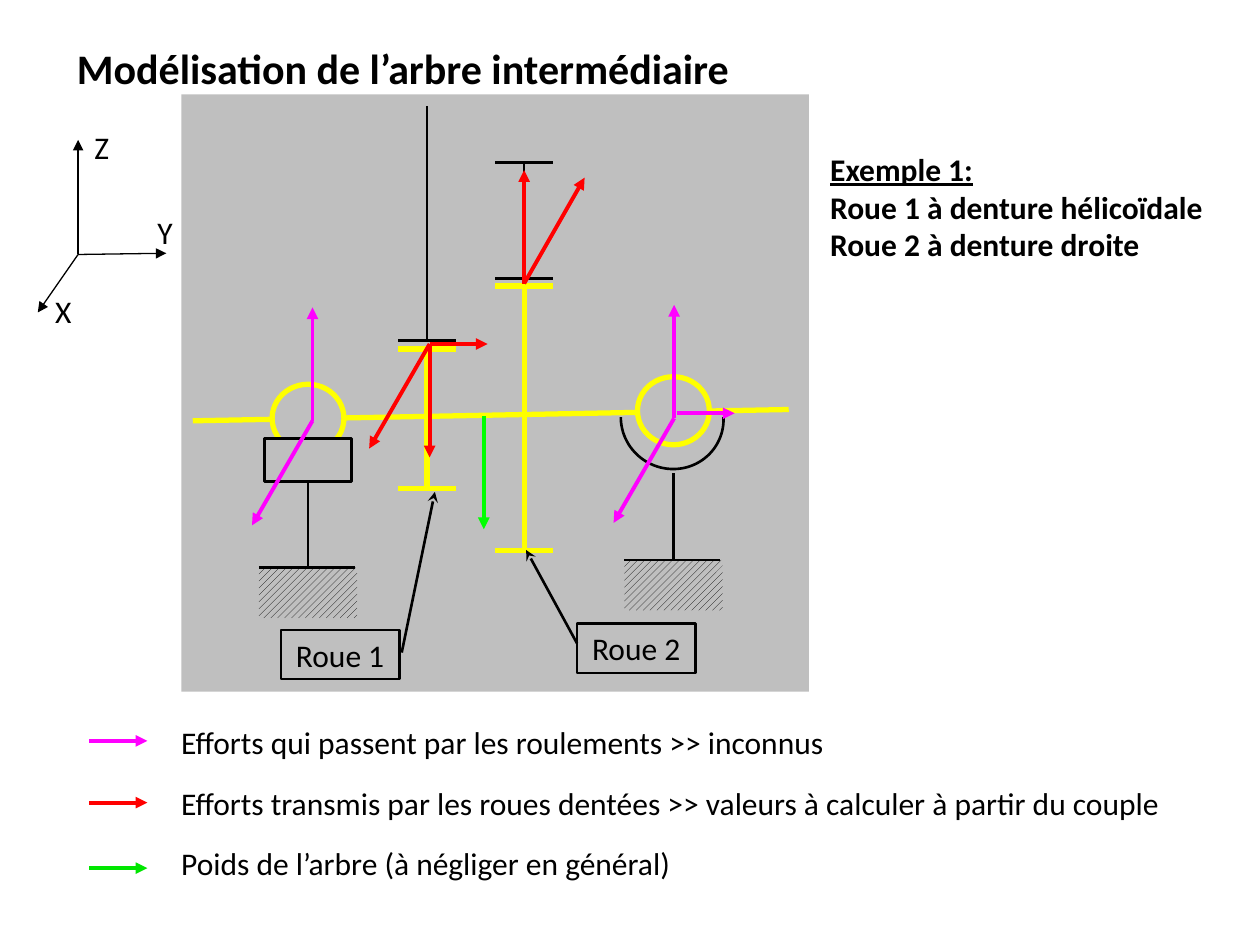
from dataclasses import dataclass

import pptx
import pptx.dml.color
import pptx.enum.dml
import pptx.enum.shapes
import pptx.enum.text
import pptx.oxml
import pptx.oxml.ns
import pptx.util

SHAPE = pptx.enum.shapes.MSO_SHAPE
ALIGN = pptx.enum.text.PP_ALIGN
ANCHOR = pptx.enum.text.MSO_ANCHOR
COLUMNS, ROWS = 100, 75  # square cells over the whole slide


@dataclass(frozen=True)
class Theme:
    font: str = "Calibri"
    title: float = 24
    body: float = 18
    ink: str = "000000"
    panel: str = "BFBFBF"
    shaft: str = "FFFF00"
    bearing: str = "FF00FF"
    gear: str = "FF0000"
    weight: str = "00FF00"
    weight_key: str = "00E600"
    hairline: float = 0.75
    outline: float = 1.5
    force: float = 2.25
    thick: float = 3


THEME = Theme()


def rgb(colour):
    return pptx.dml.color.RGBColor.from_string(colour)


def add_tip(shape, kind):
    line = shape._element.spPr.find(pptx.oxml.ns.qn("a:ln"))
    line.append(pptx.oxml.parse_xml(
        f'<a:tailEnd {pptx.oxml.ns.nsdecls("a")} type="{kind}"/>'))


def style_text(frame, size=THEME.body, bold=False):
    for paragraph in frame.paragraphs:
        for run in paragraph.runs:
            run.font.name = THEME.font
            run.font.size = pptx.util.Pt(size)
            run.font.bold = bold
            run.font.color.rgb = rgb(THEME.ink)


class Region:
    """A box on the slide; its contents are placed in grid cells from its corner."""

    def __init__(self, slide, cell, left, top, width, height):
        self.shapes, self.cell = slide.shapes, cell
        self.left, self.top, self.width, self.height = left, top, width, height

    def place(self, x, y):
        return round((self.left + x) * self.cell), round((self.top + y) * self.cell)

    def span(self, x, y, width, height):
        return *self.place(x, y), round(width * self.cell), round(height * self.cell)

    def line(self, start, end, colour=THEME.ink, weight=THEME.outline, tip=None):
        connector = self.shapes.add_connector(
            pptx.enum.shapes.MSO_CONNECTOR.STRAIGHT, *self.place(*start), *self.place(*end))
        connector.line.color.rgb = rgb(colour)
        connector.line.width = pptx.util.Pt(weight)
        if tip:
            add_tip(connector, tip)
        connector._element.spPr.append(
            pptx.oxml.parse_xml(f'<a:effectLst {pptx.oxml.ns.nsdecls("a")}/>'))

    def force(self, origin, reach, colour, weight=THEME.force):
        end = origin[0] + reach[0], origin[1] + reach[1]
        self.line(origin, end, colour, weight, "triangle")

    def shape(self, kind, box, fill=THEME.panel, edge=None, weight=THEME.outline):
        shape = self.shapes.add_shape(kind, *self.span(*box))
        shape.shadow.inherit = False
        if fill:
            shape.fill.solid()
            shape.fill.fore_color.rgb = rgb(fill)
        else:
            shape.fill.background()
        if edge:
            shape.line.color.rgb = rgb(edge)
            shape.line.width = pptx.util.Pt(weight)
        else:
            shape.line.fill.background()
        return shape

    def text(self, words, box, bold=False):
        frame = self.shapes.add_textbox(*self.span(*box)).text_frame
        frame.word_wrap = False
        frame.text = words
        style_text(frame, bold=bold)
        return frame


def draw_title(slide, region):
    title = slide.shapes.title
    title.left, title.top, title.width, title.height = region.span(
        0, 0, region.width, region.height)
    frame = title.text_frame
    frame.text = "Modélisation de l’arbre intermédiaire"
    frame.word_wrap = True
    frame.auto_size = pptx.enum.text.MSO_AUTO_SIZE.NONE
    frame.vertical_anchor = ANCHOR.TOP
    frame.paragraphs[0].alignment = ALIGN.LEFT
    style_text(frame, THEME.title, bold=True)


def draw_axes(region):
    origin = 3.2, 9.1
    for reach in ((0, -9.1), (7, -0.1), (-3.2, 4.6)):
        region.force(origin, reach, THEME.ink, THEME.hairline)
    for letter, x, y in (("X", 0.4, 11.6), ("Y", 8.5, 5.3), ("Z", 3.5, -1.4)):
        region.text(letter, (x, y, 3.3, 4))


def draw_example(region):
    frame = region.text("Exemple 1:\nRoue 1 à denture hélicoïdale\nRoue 2 à denture droite",
                        (0, 0, region.width, region.height), bold=True)
    frame.paragraphs[0].runs[0].font.underline = True


def draw_wheel(region, x, top, bottom, rims, colour=THEME.ink, weight=THEME.outline):
    region.line((x, top), (x, bottom), colour, weight)
    for y in rims:
        region.line((x - 2.3, y), (x + 2.3, y), colour, weight)


def draw_ring(region, x, y):
    region.shape(SHAPE.OVAL, (x - 2.85, y - 2.7, 5.7, 5.4), edge=THEME.shaft, weight=THEME.thick)


def draw_ground(region, x, y):
    """Hatched ground with its stem, below a bearing centred on x, y."""
    floor = y + 11.85
    hatch = region.shape(SHAPE.RECTANGLE, (x - 3.9, floor, 7.8, 4))
    hatch.fill.patterned()
    hatch.fill.pattern = pptx.enum.dml.MSO_PATTERN.WIDE_UPWARD_DIAGONAL
    hatch.fill.fore_color.rgb = rgb(THEME.ink)
    hatch.fill.back_color.rgb = rgb(THEME.panel)
    region.line((x - 3.9, floor), (x + 3.7, floor))
    region.line((x, floor), (x, y + 4.9))


def draw_seat(region, x, y):
    """Round seat: a chord whose upper edge is covered."""
    seat = region.shape(SHAPE.CHORD, (x - 4.1, y - 3.5, 8, 8.2), edge=THEME.ink)
    seat.adjustments[0], seat.adjustments[1] = 29.25, 150.77
    seat.rotation = 298.9
    region.shape(SHAPE.RECTANGLE, (x - 5.55, y - 2.2, 11.4, 2.7))


def draw_callout(region, words, corner, pointer):
    callout = region.shape(SHAPE.LINE_CALLOUT_1, (*corner, 9.4, 3.9), None, THEME.ink)
    for index, value in enumerate(pointer):
        callout.adjustments[index] = value
    add_tip(callout, "stealth")
    frame = callout.text_frame
    frame.text = words
    frame.vertical_anchor = ANCHOR.MIDDLE
    frame.paragraphs[0].alignment = ALIGN.CENTER
    style_text(frame)


def draw_forces(region):
    up, down, oblique, axial = (0, -9), (0, 9), (-4.8, 8.3), (4.6, 0)
    for origin in ((10.4, 25.9), (39.1, 25.7)):
        region.force(origin, oblique, THEME.bearing)
        region.force(origin, up, THEME.bearing)
    region.force((39.3, 25.3), axial, THEME.bearing)
    for origin, reaches in (((19.7, 19.8), (oblique, down, axial)),
                            ((27.2, 15), ((4.8, -8.4), up))):
        for reach in reaches:
            region.force(origin, reach, THEME.gear)
    region.force((24, 25.5), down, THEME.weight)


def draw_diagram(region):
    region.shape(SHAPE.RECTANGLE, (0, 0, region.width, region.height))
    fixed, sliding = (10.05, 25.7), (39.05, 25.1)
    draw_wheel(region, 19.5, 0.9, 19.5, (19.5,))
    draw_wheel(region, 27.2, 5.4, 14.6, (5.4, 14.6))
    draw_seat(region, *sliding)
    region.line((0.9, 25.9), (48.2, 25), THEME.shaft, THEME.thick)
    for x, top, bottom in ((19.5, 20.2, 31.3), (27.2, 15.2, 36.2)):
        draw_wheel(region, x, top, bottom, (top, bottom), THEME.shaft, THEME.thick)
    for bearing in (fixed, sliding):
        draw_ring(region, *bearing)
        draw_ground(region, *bearing)
    region.shape(SHAPE.RECTANGLE, (6.6, 27.3, 6.9, 3.4), edge=THEME.ink)
    draw_forces(region)
    draw_callout(region, "Roue 2", (31.4, 42), (0.4, 0, -1.5, -0.43))
    draw_callout(region, "Roue 1", (7.9, 42.5), (0.46, 1.02, -2.81, 1.3))


def draw_legend(region):
    entries = (
        (THEME.bearing, 1.9, 53.7, "Efforts qui passent par les roulements >> inconnus"),
        (THEME.gear, 6.8, 80.6,
         "Efforts transmis par les roues dentées >> valeurs à calculer à partir du couple"),
        (THEME.weight_key, 12, 41.3, "Poids de l’arbre (à négliger en général)"),
    )
    for row, (colour, y, width, words) in enumerate(entries):
        region.force((0, y), (4.6, 0), colour)
        region.text(words, (6.3, 4.8 * row, width, 4))


def main():
    deck = pptx.Presentation()
    deck.slide_width, deck.slide_height = pptx.util.Inches(10), pptx.util.Inches(7.5)
    slide = deck.slides.add_slide(deck.slide_layouts[5])
    cell = min(deck.slide_width / COLUMNS, deck.slide_height / ROWS)
    draw_diagram(Region(slide, cell, 14.4, 7.5, 49.8, 47.4))
    draw_title(slide, Region(slide, cell, 5.1, 2.9, 55.1, 5))
    draw_axes(Region(slide, cell, 3, 11.1, 10.2, 13.7))
    draw_example(Region(slide, cell, 64.9, 11.4, 31.8, 10.1))
    draw_legend(Region(slide, cell, 7.1, 56.9, 86.9, 13.6))
    deck.save("out.pptx")


if __name__ == "__main__":
    main()
